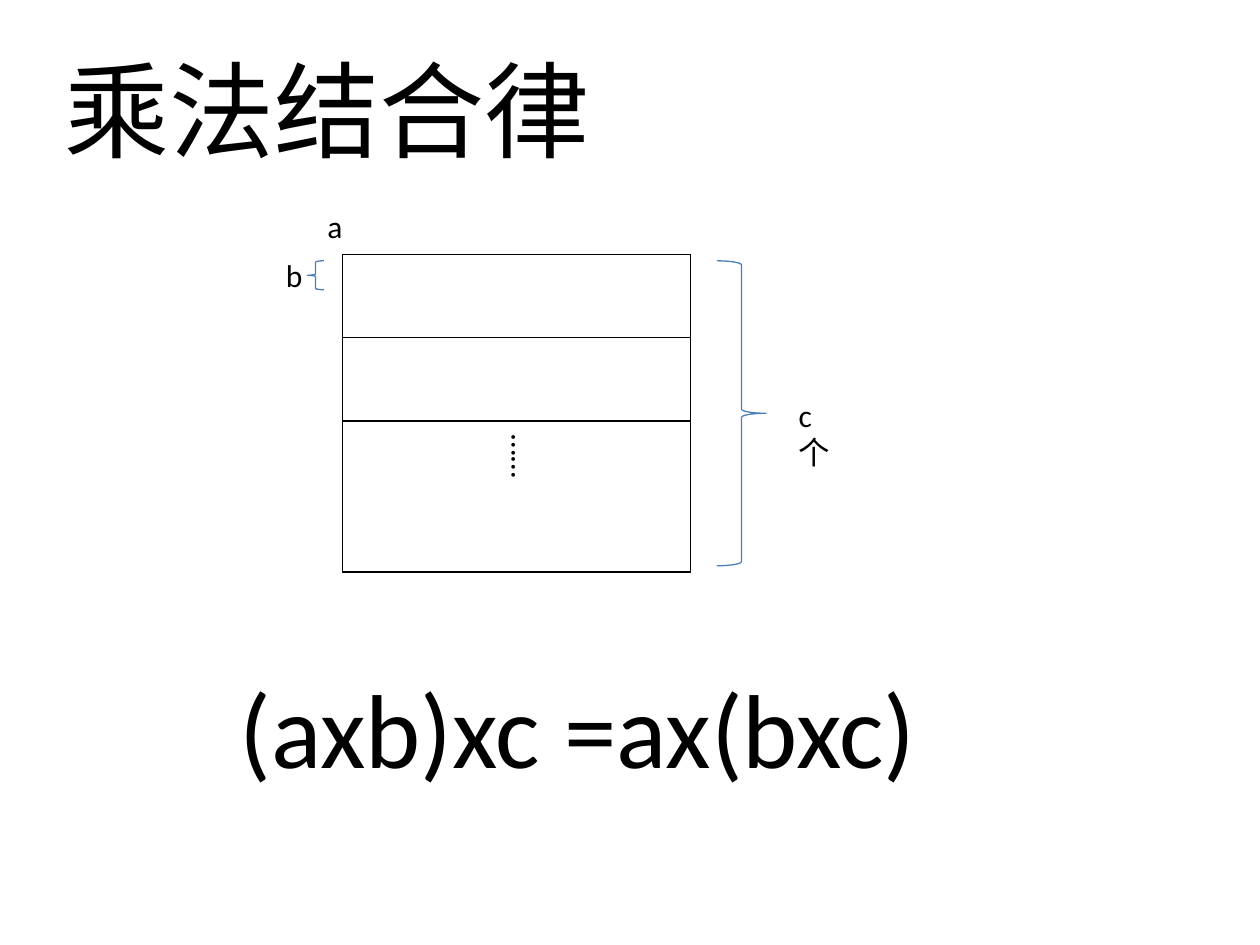
from pptx import Presentation
from pptx.dml.color import RGBColor
from pptx.enum.shapes import MSO_SHAPE
from pptx.enum.text import MSO_AUTO_SIZE
from pptx.oxml.ns import qn
from pptx.util import Inches, Pt
from lxml import etree

LEFT_BRACE, RIGHT_BRACE = MSO_SHAPE.LEFT_BRACE, MSO_SHAPE.RIGHT_BRACE
GROW = MSO_AUTO_SIZE.SHAPE_TO_FIT_TEXT
COLORS = {"ink": "000000", "paper": "FFFFFF", "brace": "4B7EBC"}
LATIN, CJK = "Calibri", "Noto Sans CJK SC"
COLS, ROWS = 100, 75


class Board:
    def __init__(self, prs):
        self.slide = prs.slides.add_slide(prs.slide_layouts[6])
        self.col = prs.slide_width / COLS
        self.row = prs.slide_height / ROWS

    def box(self, x, y, w, h):
        return (round(x * self.col), round(y * self.row),
                round(w * self.col), round(h * self.row))

    def text(self, text, x, y, w, h, size=18, font=LATIN, wrap=True, vert=None):
        sp = self.slide.shapes.add_textbox(*self.box(x, y, w, h))
        tf = sp.text_frame
        tf.text = text
        tf.word_wrap = wrap
        tf.auto_size = GROW
        if vert:
            sp._element.txBody.find(qn("a:bodyPr")).set("vert", vert)
        r = tf.paragraphs[0].runs[0]
        r.font.size = Pt(size)
        r.font.name = font
        r.font.color.rgb = RGBColor.from_string(COLORS["ink"])
        etree.SubElement(r.font._element, qn("a:ea"), typeface=CJK)

    def brace(self, kind, x, y, w, h):
        sp = self.slide.shapes.add_shape(kind, *self.box(x, y, w, h))
        sp.shadow.inherit = False
        sp.fill.background()
        sp.line.color.rgb = RGBColor.from_string(COLORS["brace"])
        sp.line.width = Pt(0.75)

    def stack(self, x, y, w, heights):
        frame = self.slide.shapes.add_table(
            len(heights), 1, *self.box(x, y, w, sum(heights)))
        table = frame.table
        table.first_row = table.horz_banding = False
        for i, h in enumerate(heights):
            table.rows[i].height = round(h * self.row)
            self.border(table.cell(i, 0))

    def border(self, cell):
        tc_pr = cell._tc.get_or_add_tcPr()
        for side in ("lnL", "lnR", "lnT", "lnB"):
            ln = etree.SubElement(tc_pr, qn(f"a:{side}"), w=str(Pt(1)))
            fill = etree.SubElement(ln, qn("a:solidFill"))
            etree.SubElement(fill, qn("a:srgbClr"), val=COLORS["ink"])
        cell.fill.solid()
        cell.fill.fore_color.rgb = RGBColor.from_string(COLORS["paper"])


def main():
    prs = Presentation()
    prs.slide_width, prs.slide_height = Inches(10), Inches(7.5)
    s = Board(prs)
    s.stack(27.2, 20.2, 27.6, [6.6, 6.6, 12])
    s.text("……", 38.6, 33.5, 5, 4.5, wrap=False, vert="eaVert")
    s.text("a", 25, 15.9, 4.7, 4)
    s.text("b", 21.7, 19.8, 3.1, 4)
    s.brace(RIGHT_BRACE, 56.9, 20.7, 3.9, 24.2)
    s.text("c个", 62.4, 30.9, 5.5, 4)
    s.brace(LEFT_BRACE, 24.4, 20.7, 1.3, 2.3)
    s.text("(axb)xc =ax(bxc)", 18, 52.2, 60.2, 11.1, size=60)
    s.text(" 乘法结合律", 2.3, 3.1, 54.7, 11.1, size=60, font=CJK)
    prs.save("out.pptx")


if __name__ == "__main__":
    main()
